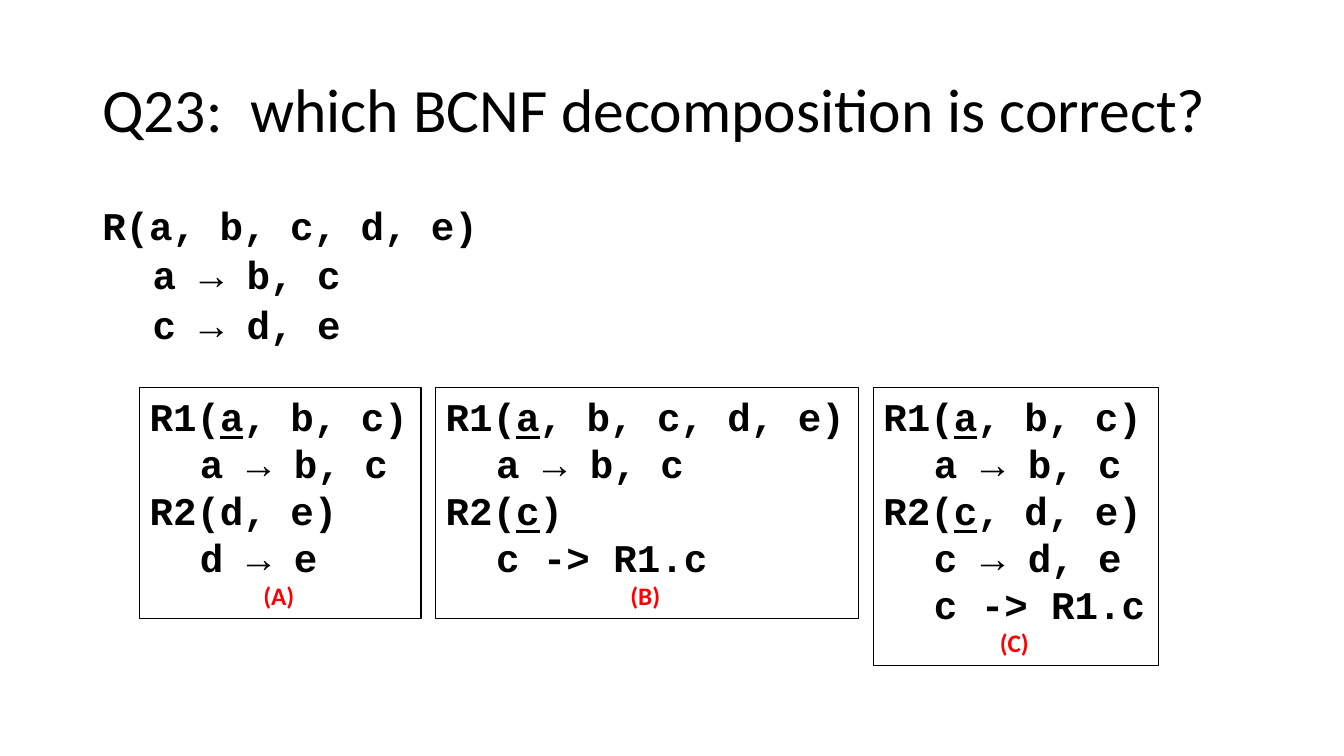
from pptx import Presentation
from pptx.dml.color import RGBColor
from pptx.enum.shapes import MSO_SHAPE
from pptx.enum.text import MSO_ANCHOR, MSO_AUTO_SIZE, PP_ALIGN
from pptx.util import Pt

PX = 9525  # EMU per px, 96 px to the inch
INDENT = 48


def color(hex_code):
    return RGBColor.from_string(hex_code)


def write_line(para, text, size=28, font="Courier New", ink="000000", bold=True, indent=0):
    """Add the text run by run; parts between underscores are underlined keys."""
    if indent:
        para.level = 1
        properties = para._p.get_or_add_pPr()
        properties.set("marL", str(indent * PX))
        properties.set("indent", "0")
    for index, part in enumerate(text.split("_")):
        span = para.add_run()
        span.text = part
        span.font.size = Pt(size)
        span.font.name = font
        span.font.bold = bold
        span.font.underline = index % 2 == 1
        span.font.color.rgb = color(ink)


deck = Presentation()
deck.slide_width, deck.slide_height = 1280 * PX, 720 * PX
page = deck.slides.add_slide(deck.slide_layouts[6])

# Title
title = page.shapes.add_textbox(88 * PX, 38 * PX, 1104 * PX, 139 * PX).text_frame
title.word_wrap = True
title.vertical_anchor = MSO_ANCHOR.MIDDLE
title.paragraphs[0].line_spacing = 0.9
write_line(title.paragraphs[0], "Q23:  which BCNF decomposition is correct?",
           size=44, font="Calibri", bold=False)

# Relation and its functional dependencies
relation = page.shapes.add_textbox(88 * PX, 192 * PX, 1104 * PX, 457 * PX).text_frame
relation.word_wrap = True
for row, (text, indent, space) in enumerate([
    ("R(a, b, c, d, e)", 0, 10),
    ("a → b, c", INDENT, 5),
    ("c → d, e", INDENT, 5),
]):
    para = relation.add_paragraph() if row else relation.paragraphs[0]
    para.line_spacing = 0.9
    para.space_before = Pt(space)
    write_line(para, text, indent=indent)

# Candidate answers, left to right: label, width, height, lines
answers = [
    ("(A)", 268, 220, ["R1(_a_, b, c)", "a → b, c", "R2(d, e)", "d → e"]),
    ("(B)", 403, 220, ["R1(_a_, b, c, d, e)", "a → b, c", "R2(_c_)", "c -> R1.c"]),
    ("(C)", 271, 265, ["R1(_a_, b, c)", "a → b, c", "R2(_c_, d, e)", "c → d, e", "c -> R1.c"]),
]
left, gap = 133, 14
for label, width, height, lines in answers:
    box = page.shapes.add_shape(MSO_SHAPE.RECTANGLE, left * PX, 369 * PX, width * PX, height * PX)
    box.shadow.inherit = False
    box.fill.background()
    box.line.color.rgb = color("000000")
    box.line.width = Pt(0.75)
    frame = box.text_frame
    frame.word_wrap = False
    frame.auto_size = MSO_AUTO_SIZE.SHAPE_TO_FIT_TEXT
    frame.vertical_anchor = MSO_ANCHOR.TOP
    for row, text in enumerate(lines):
        para = frame.add_paragraph() if row else frame.paragraphs[0]
        para.alignment = PP_ALIGN.LEFT
        write_line(para, text, indent=0 if text.startswith("R") else INDENT)
    para = frame.add_paragraph()
    para.alignment = PP_ALIGN.CENTER
    write_line(para, label, size=18, font="Calibri", ink="FF0000")
    left += width + gap

deck.save("out.pptx")
